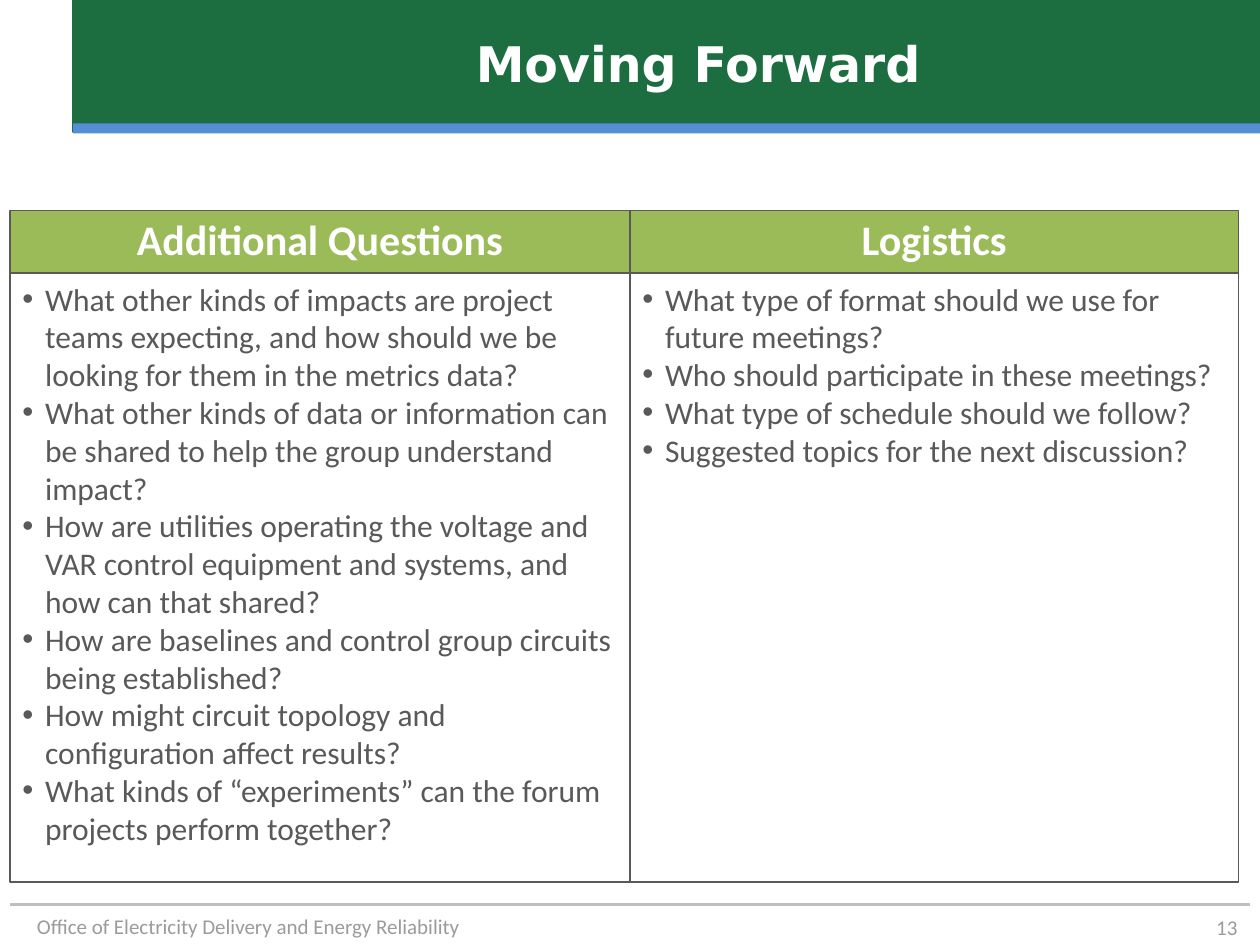
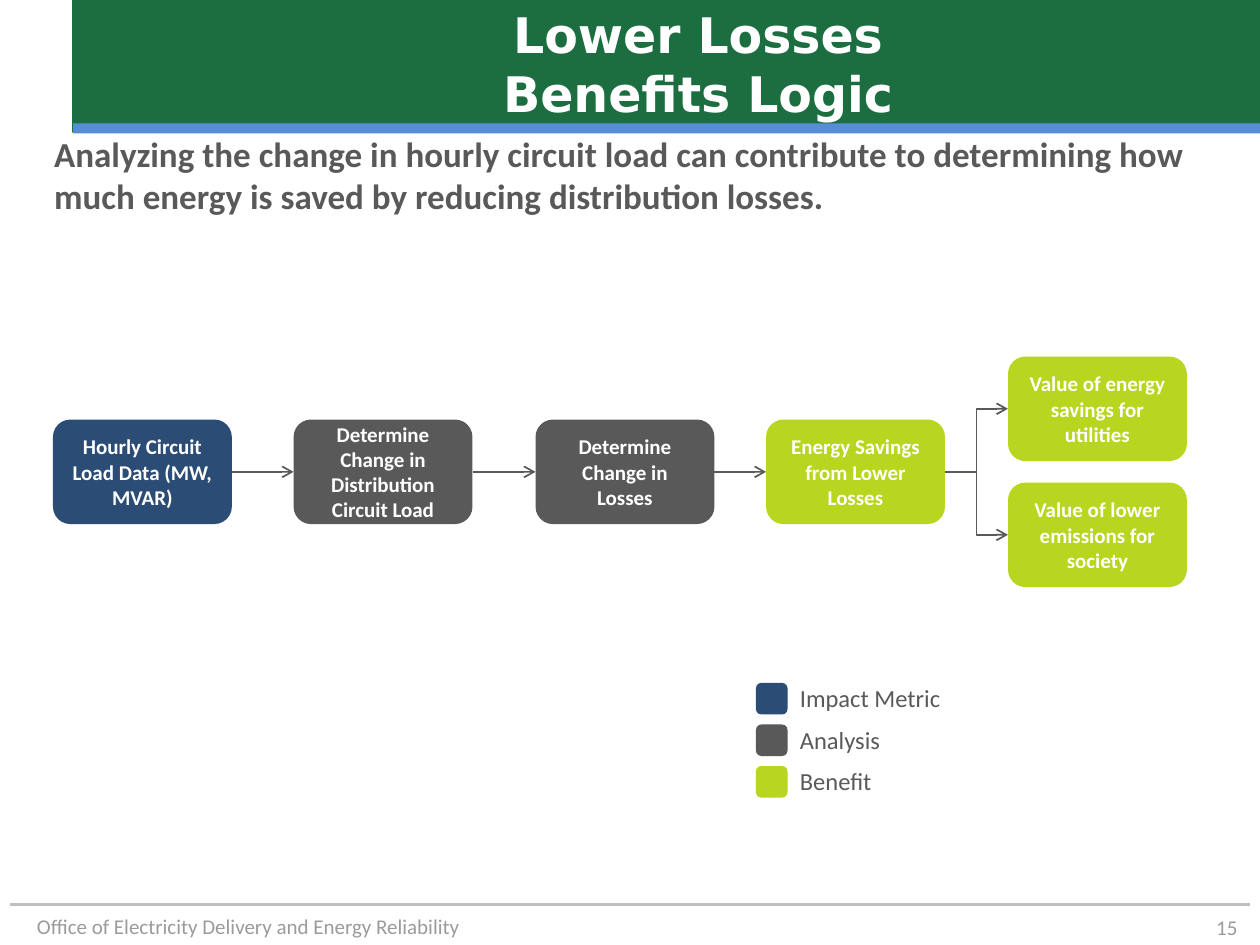
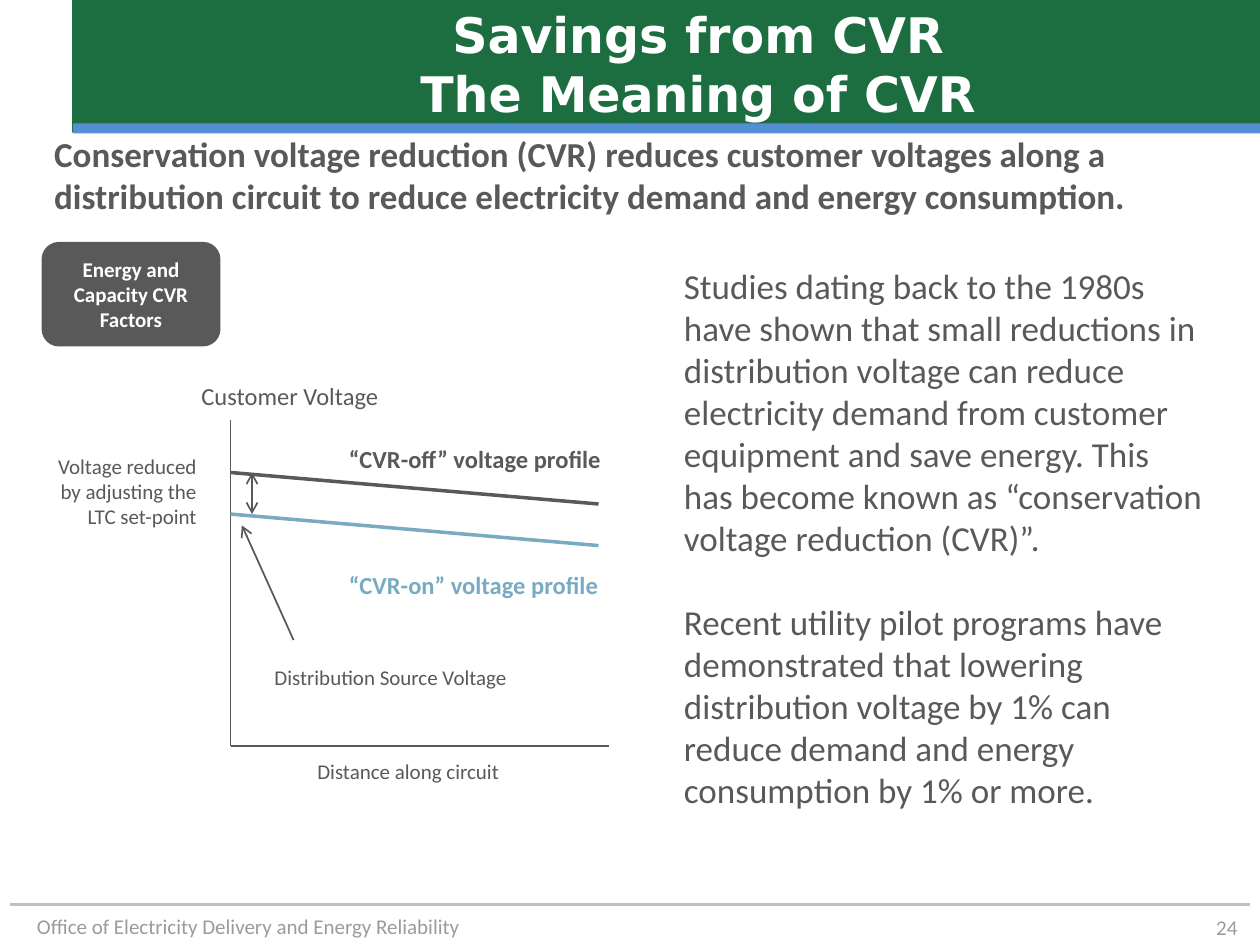
from dataclasses import dataclass
from typing import NamedTuple

from lxml.etree import SubElement
from pptx import Presentation
from pptx.dml.color import RGBColor
from pptx.enum.shapes import MSO_CONNECTOR as Link, MSO_SHAPE as Form
from pptx.enum.text import MSO_ANCHOR as Anchor, MSO_AUTO_SIZE as Fit, PP_ALIGN as Align
from pptx.oxml.ns import qn
from pptx.util import Inches, Pt


# Theme: every colour, font and type size
@dataclass(frozen=True)
class Theme:
    white: str = "FFFFFF"
    green: str = "1C6E41"
    blue: str = "558ED5"
    olive: str = "9BBB59"
    navy: str = "2B4C74"
    gray: str = "595959"
    lime: str = "B8D51F"
    sky: str = "78ABC2"
    rule: str = "BFBFBF"
    foot: str = "9B9B9B"
    face: str = "Calibri"
    display: str = "DejaVu Sans"
    title: int = 28
    head: int = 24
    lead: int = 20
    body: int = 18
    label: int = 14
    small: int = 12


THEME = Theme()


class Box(NamedTuple):
    left: float
    top: float
    width: float
    height: float


class Inset(NamedTuple):
    left: float = 0.1
    top: float = 0.05
    right: float = 0.1
    bottom: float = 0.05


class Style(NamedTuple):
    size: int = THEME.small
    color: str = THEME.gray
    bold: bool = False
    align: Align = Align.LEFT
    anchor: Anchor = Anchor.TOP
    inset: Inset = Inset()
    face: str = THEME.face
    wrap: bool = True
    bullet: bool = False
    gap: float = 0
    lines: float = 1


class Node(NamedTuple):
    text: str
    left: float
    top: float
    color: str


class Note(NamedTuple):
    text: str
    box: Box
    style: Style


class Line(NamedTuple):
    start: tuple[float, float]
    end: tuple[float, float]
    color: str = THEME.gray
    width: float = 1
    head: bool = False
    tail: bool = False


class Panel(NamedTuple):
    head: str
    left: float
    width: float
    items: tuple[str, ...]


EVEN = Inset(0.1, 0.1, 0.1, 0.1)
FLAT = Inset(0.1, 0, 0.1, 0)
TITLE = Style(THEME.title, THEME.white, True, Align.CENTER, Anchor.MIDDLE,
              face=THEME.display)
LEAD = Style(THEME.lead, bold=True)
HEAD = Style(THEME.head, THEME.white, True, Align.CENTER, Anchor.MIDDLE, FLAT, lines=0.9)
ITEM = Style(THEME.body, bullet=True)
NODE = Style(THEME.small, THEME.white, True, Align.CENTER, Anchor.MIDDLE, EVEN)
KEY = Style(THEME.label, inset=FLAT)
PROSE = Style(THEME.lead, inset=EVEN, gap=24)
SMALL = Style(inset=EVEN, wrap=False)
LABEL = SMALL._replace(size=THEME.label)
FOOT = Style(color=THEME.foot, align=Align.RIGHT)
PAGE = FOOT._replace(anchor=Anchor.MIDDLE, inset=Inset(0, 0, 0.1, 0))

NODE_W, NODE_H = 1.42, 0.83


# Drawing helpers
def rgb(code: str) -> RGBColor:
    return RGBColor.from_string(code)


def place(shape, box: Box) -> None:
    shape.left, shape.top, shape.width, shape.height = map(Inches, box)


def indent(para, bullet: bool) -> None:
    props = para._p.get_or_add_pPr()
    step = Inches(0.18) if bullet else 0
    props.set("marL", str(step))
    props.set("indent", str(-step))
    if bullet:
        SubElement(props, qn("a:buFont")).set("typeface", "Arial")
        SubElement(props, qn("a:buChar")).set("char", "•")
    else:
        SubElement(props, qn("a:buNone"))


def write(shape, texts: tuple[str, ...], style: Style) -> None:
    frame = shape.text_frame
    frame.word_wrap = style.wrap
    frame.auto_size = Fit.NONE
    frame.vertical_anchor = style.anchor
    (frame.margin_left, frame.margin_top,
     frame.margin_right, frame.margin_bottom) = map(Inches, style.inset)
    for i, text in enumerate(texts):
        para = frame.add_paragraph() if i else frame.paragraphs[0]
        indent(para, style.bullet)
        para.alignment = style.align
        para.line_spacing = style.lines
        para.space_before = Pt(style.gap if i else 0)
        for j, part in enumerate(text.split("\n")):
            if j:
                para.add_line_break()
            run = para.add_run()
            run.text = part
            font = run.font
            font.name, font.size, font.bold = style.face, Pt(style.size), style.bold
            font.color.rgb = rgb(style.color)


def label(slide, text: str, box: Box, style: Style):
    shape = slide.shapes.add_textbox(*map(Inches, box))
    write(shape, (text,), style)
    return shape


def block(slide, box: Box, fill: str = "", edge: str = "", form: Form = Form.RECTANGLE):
    shape = slide.shapes.add_shape(form, *map(Inches, box))
    shape.shadow.inherit = False
    if fill:
        shape.fill.solid()
        shape.fill.fore_color.rgb = rgb(fill)
    else:
        shape.fill.background()
    if edge:
        shape.line.color.rgb = rgb(edge)
        shape.line.width = Pt(1)
    else:
        shape.line.fill.background()
    return shape


def draw(slide, line: Line):
    (x1, y1), (x2, y2) = line.start, line.end
    bent = line.tail and x1 != x2 and y1 != y2 and x2 > x1
    kind = Link.ELBOW if bent else Link.STRAIGHT
    wire = slide.shapes.add_connector(kind, *map(Inches, (x1, y1, x2, y2)))
    wire.line.color.rgb = rgb(line.color)
    wire.line.width = Pt(line.width)
    props = wire.element.spPr
    for tag, shown in (("a:headEnd", line.head), ("a:tailEnd", line.tail)):
        if shown:
            SubElement(props.find(qn("a:ln")), qn(tag)).set("type", "arrow")
    SubElement(props, qn("a:effectLst"))
    return wire


def node(slide, item: Node) -> None:
    box = Box(item.left, item.top, NODE_W, NODE_H)
    write(block(slide, box, item.color, form=Form.ROUNDED_RECTANGLE), (item.text,), NODE)


# Shared frame: bands, footer and rule, drawn once and moved to the master
def frame(slide, master) -> None:
    parts = (
        block(slide, Box(0.58, 0, 9.42, 1.05), THEME.green, THEME.green),
        block(slide, Box(0.58, 0.98, 9.42, 0.08), THEME.blue),
        label(slide, "Office of Electricity Delivery and Energy Reliability",
              Box(0, 7.2, 3.75, 0.3), FOOT),
        draw(slide, Line((0.08, 7.18), (9.92, 7.18), THEME.rule, 1.75)),
    )
    for i, part in enumerate(parts):
        master.shapes.element.insert(2 + i, part.element)


def start(prs, page: int, title: str, lead: str = ""):
    slide = prs.slides.add_slide(prs.slide_layouts[1 if lead else 5])
    place(slide.shapes.title, Box(1.08, 0, 8.92, 1))
    write(slide.shapes.title, (title,), TITLE)
    if lead:
        body = slide.placeholders[1]
        place(body, Box(0.33, 1, 9.3, 0.67))
        write(body, (lead,), LEAD)
    label(slide, str(page), Box(7.42, 7.21, 2.5, 0.29), PAGE)
    return slide


# Slide: questions and logistics
PANELS = (
    Panel("Additional Questions", 0.08, 4.92, (
        "What other kinds of impacts are project teams expecting, and how should we be "
        "looking for them in the metrics data?",
        "What other kinds of data or information can be shared to help the group "
        "understand impact?",
        "How are utilities operating the voltage and VAR control equipment and systems, "
        "and how can that shared?",
        "How are baselines and control group circuits being established?",
        "How might circuit topology and configuration affect results?",
        "What kinds of “experiments” can the forum projects perform together?",
    )),
    Panel("Logistics", 5, 4.83, (
        "What type of format should we use for future meetings?",
        "Who should participate in these meetings?",
        "What type of schedule should we follow?",
        "Suggested topics for the next discussion?",
    )),
)


def forward(prs) -> None:
    slide = start(prs, 13, "Moving Forward")
    frame(slide, prs.slide_master)
    for panel in PANELS:
        body = block(slide, Box(panel.left, 2.17, panel.width, 4.83), edge=THEME.gray)
        write(body, panel.items, ITEM)
        head = block(slide, Box(panel.left, 1.67, panel.width, 0.5), THEME.olive, THEME.gray)
        write(head, (panel.head,), HEAD)


# Slide: flow from metric to benefits
CHAIN = (
    Node("Hourly Circuit Load Data (MW, MVAR)", 0.42, 3.33, THEME.navy),
    Node("Determine Change in Distribution Circuit Load", 2.33, 3.33, THEME.gray),
    Node("Determine Change in Losses", 4.25, 3.33, THEME.gray),
    Node("Energy Savings from Lower Losses", 6.08, 3.33, THEME.lime),
)
VALUES = (
    Node("Value of energy savings for utilities", 8, 2.83, THEME.lime),
    Node("Value of lower emissions for society", 8, 3.83, THEME.lime),
)
KEYS = (("Impact Metric", THEME.navy), ("Analysis", THEME.gray), ("Benefit", THEME.lime))


def join(slide, a: Node, b: Node) -> None:
    half = NODE_H / 2
    draw(slide, Line((a.left + NODE_W, a.top + half), (b.left, b.top + half), tail=True))


def logic(prs) -> None:
    slide = start(prs, 15, "Lower Losses\nBenefits Logic",
                  "Analyzing the change in hourly circuit load can contribute to determining "
                  "how much energy is saved by reducing distribution losses.")
    for item in CHAIN + VALUES:
        node(slide, item)
    for a, b in zip(CHAIN, CHAIN[1:]):
        join(slide, a, b)
    for value in VALUES:
        join(slide, CHAIN[-1], value)
    for i, (text, color) in enumerate(KEYS):
        top = 5.42 + 0.33 * i
        block(slide, Box(6, top, 0.25, 0.25), color, form=Form.ROUNDED_RECTANGLE)
        label(slide, text, Box(6.25, top, 2.67, 0.25), KEY)


# Slide: voltage profile sketch and its explanation
LINES = (
    Line((1.83, 5.92), (4.83, 5.92)),
    Line((1.83, 5.92), (1.83, 3.33)),
    Line((1.83, 3.75), (4.75, 4), width=2),
    Line((1.83, 4.08), (4.75, 4.33), THEME.sky, 2),
    Line((2, 3.75), (2, 4.08), head=True, tail=True),
    Line((2.33, 5.08), (1.92, 4.17), tail=True),
)
NOTES = (
    Note("“CVR-off” voltage profile", Box(2.67, 3.42, 2.25, 0.42),
         LABEL._replace(bold=True, wrap=True)),
    Note("“CVR-on” voltage profile", Box(2.67, 4.42, 2, 0.42),
         LABEL._replace(bold=True, color=THEME.sky)),
    Note("Voltage reduced by adjusting the LTC set-point", Box(0.33, 3.5, 1.33, 0.83),
         SMALL._replace(align=Align.RIGHT, wrap=True)),
    Note("Distance along circuit", Box(2.42, 5.92, 2.08, 0.33), SMALL),
    Note("Customer Voltage", Box(1.5, 2.92, 1.67, 0.42), LABEL),
    Note("Distribution Source Voltage", Box(2.08, 5.17, 2.42, 0.42), SMALL),
)
STUDY = (
    "Studies dating back to the 1980s have shown that small reductions in distribution "
    "voltage can reduce electricity demand from customer equipment and save energy. This "
    "has become known as “conservation voltage reduction (CVR)”.",
    "Recent utility pilot programs have demonstrated that lowering distribution voltage "
    "by 1% can reduce demand and energy consumption by 1% or more.",
)


def meaning(prs) -> None:
    slide = start(prs, 24, "Savings from CVR\nThe Meaning of CVR",
                  "Conservation voltage reduction (CVR) reduces customer voltages along a "
                  "distribution circuit to reduce electricity demand and energy consumption.")
    prose = slide.shapes.add_textbox(*map(Inches, Box(5.33, 2, 4.33, 4.75)))
    write(prose, STUDY, PROSE)
    for line in LINES:
        draw(slide, line)
    for note in NOTES:
        label(slide, *note)
    node(slide, Node("Energy and Capacity CVR Factors", 0.33, 1.92, THEME.gray))


def main() -> None:
    prs = Presentation()
    prs.slide_width, prs.slide_height = Inches(10), Inches(7.5)
    for build in (forward, logic, meaning):
        build(prs)
    prs.save("out.pptx")


if __name__ == "__main__":
    main()
